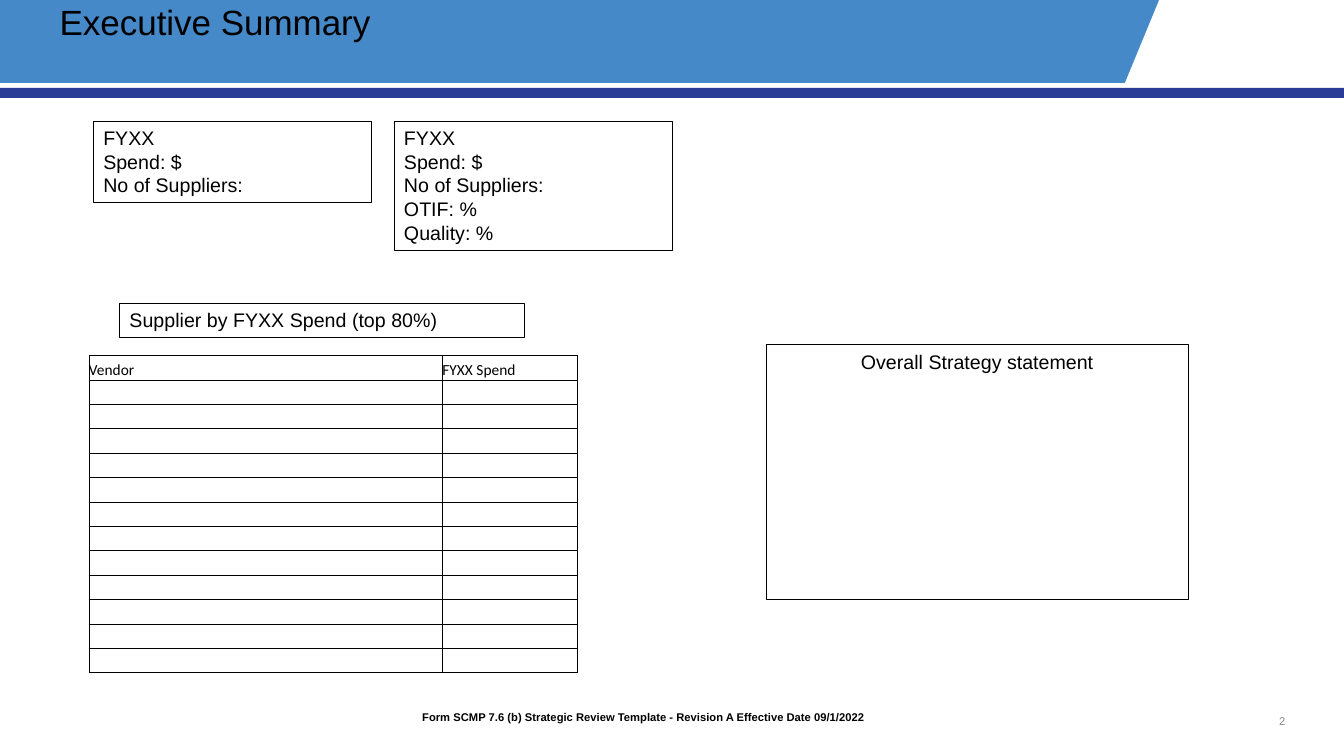
import pptx
import pptx.dml.color
import pptx.enum.shapes
import pptx.enum.text
import pptx.oxml.ns
import pptx.util
from lxml import etree

Pt = pptx.util.Pt
ALIGN = pptx.enum.text.PP_ALIGN
ANCHOR = pptx.enum.text.MSO_ANCHOR
RECTANGLE = pptx.enum.shapes.MSO_SHAPE.RECTANGLE

BLACK, GREY, WHITE = "000000", "888888", "FFFFFF"
LIGHT_BLUE, DARK_BLUE = "4589C8", "2A3B97"
SLIDE_WIDTH, SLIDE_HEIGHT = 960, 540

TITLE = "Executive Summary"
PAGE_NUMBER = "2"
FOOTER = "Form SCMP 7.6 (b) Strategic Review Template - Revision A Effective Date 09/1/2022"

# Lines, (left, top, width, height), alignment
FRAMED_NOTES = [
    (["FYXX", "Spend: $", "No of Suppliers:"],
     (66.7, 86.7, 198.7, 58), ALIGN.LEFT),
    (["FYXX", "Spend: $", "No of Suppliers:", "OTIF: %", "Quality: %"],
     (281.5, 86.7, 198.7, 92.3), ALIGN.LEFT),
    (["Supplier by FYXX Spend (top 80%)"],
     (85.4, 216.7, 289.4, 24.2), ALIGN.LEFT),
    (["Overall Strategy statement"],
     (547.2, 246.2, 301.7, 181.8), ALIGN.CENTER),
]

VENDOR_HEADINGS = ["Vendor", "FYXX Spend"]
VENDOR_COLUMN_WIDTHS = [252.5, 96.5]
VENDOR_EMPTY_ROWS = 12
VENDOR_ROW_HEIGHT = 17.46
VENDOR_LEFT, VENDOR_TOP = 63.5, 253.9


def rgb(hex_colour):
    return pptx.dml.color.RGBColor.from_string(hex_colour)


def place(box):
    return [Pt(length) for length in box]


def add_band(box, colour):
    band = slide.shapes.add_shape(RECTANGLE, *place(box))
    finish_fill(band, colour)


def finish_fill(shape, colour):
    shape.shadow.inherit = False
    shape.fill.solid()
    shape.fill.fore_color.rgb = rgb(colour)
    shape.line.fill.background()


def write(frame, lines, size, colour=BLACK, align=ALIGN.LEFT, font="Arial",
          bold=False, spacing=None):
    frame.word_wrap = True
    frame.text = "\n".join(lines)
    for paragraph in frame.paragraphs:
        paragraph.alignment = align
        paragraph.line_spacing = spacing
        for run in paragraph.runs:
            run.font.name = font
            run.font.size = Pt(size)
            run.font.bold = bold
            run.font.color.rgb = rgb(colour)


def add_label(box, text, size, anchor=ANCHOR.TOP, **style):
    frame = slide.shapes.add_textbox(*place(box)).text_frame
    frame.vertical_anchor = anchor
    write(frame, [text], size, **style)
    return frame


def add_framed_note(lines, box, align):
    note = slide.shapes.add_shape(RECTANGLE, *place(box))
    note.shadow.inherit = False
    note.fill.background()
    note.line.color.rgb = rgb(BLACK)
    note.line.width = Pt(0.75)
    note.text_frame.vertical_anchor = ANCHOR.TOP
    write(note.text_frame, lines, 14, align=align)


def border_cell(cell):
    properties = cell._tc.get_or_add_tcPr()
    for position, side in enumerate(("a:lnL", "a:lnR", "a:lnT", "a:lnB")):
        edge = etree.Element(pptx.oxml.ns.qn(side), w=str(Pt(0.5)))
        fill = etree.SubElement(edge, pptx.oxml.ns.qn("a:solidFill"))
        etree.SubElement(fill, pptx.oxml.ns.qn("a:srgbClr"), val=BLACK)
        properties.insert(position, edge)


def add_vendor_table():
    row_count = 1 + VENDOR_EMPTY_ROWS
    box = (VENDOR_LEFT, VENDOR_TOP, sum(VENDOR_COLUMN_WIDTHS),
           row_count * VENDOR_ROW_HEIGHT)
    vendors = slide.shapes.add_table(
        row_count, len(VENDOR_HEADINGS), *place(box)).table
    vendors.first_row = False
    vendors.horz_banding = False
    for column, width in zip(vendors.columns, VENDOR_COLUMN_WIDTHS):
        column.width = Pt(width)
    for row in vendors.rows:
        row.height = Pt(VENDOR_ROW_HEIGHT)
    for cell in vendors.iter_cells():
        cell.margin_left = cell.margin_right = 0
        cell.margin_top = cell.margin_bottom = 0
        cell.vertical_anchor = ANCHOR.BOTTOM
        cell.fill.background()
        border_cell(cell)
        # Keeps empty rows from growing to the default text size
        etree.SubElement(cell.text_frame.paragraphs[0]._p,
                         pptx.oxml.ns.qn("a:endParaRPr"), sz="1100")
    for column, heading in enumerate(VENDOR_HEADINGS):
        write(vendors.cell(0, column).text_frame, [heading], 11, font="Calibri")


deck = pptx.Presentation()
deck.slide_width, deck.slide_height = Pt(SLIDE_WIDTH), Pt(SLIDE_HEIGHT)
slide = deck.slides.add_slide(deck.slide_layouts[6])

add_band((0, 0, 950, 59.3), LIGHT_BLUE)
corner = slide.shapes.build_freeform(Pt(828), Pt(0))
corner.add_line_segments([(Pt(SLIDE_WIDTH), Pt(0)), (Pt(SLIDE_WIDTH), Pt(63)),
                          (Pt(802), Pt(63))])
finish_fill(corner.convert_to_shape(), WHITE)
add_band((0, 62.8, SLIDE_WIDTH, 7.2), DARK_BLUE)

add_label((35.5, 0, 683, 68.4), TITLE, 25, spacing=0.9)
add_label((701.3, 500.4, 224, 28.8), PAGE_NUMBER, 8, anchor=ANCHOR.MIDDLE,
          colour=GREY, align=ALIGN.RIGHT)
for lines, box, align in FRAMED_NOTES:
    add_framed_note(lines, box, align)
add_vendor_table()

footer = add_label((276.5, 504.7, 380, 27.4), FOOTER, 8, bold=True, spacing=0.9)
indent = footer.paragraphs[0]._p.get_or_add_pPr()
indent.set("marL", str(Pt(36)))
indent.set("indent", str(Pt(-18)))

deck.save("out.pptx")
